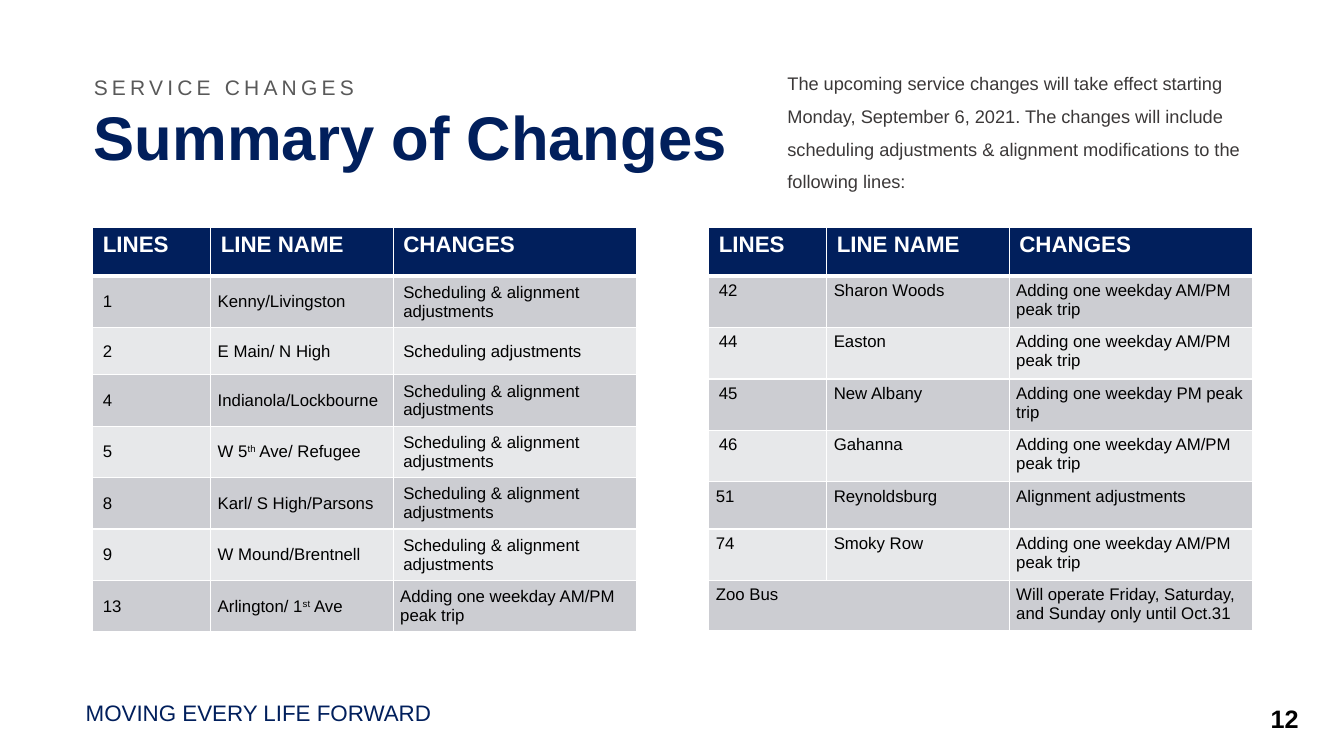
from lxml.etree import fromstring
from pptx import Presentation
from pptx.dml.color import RGBColor
from pptx.enum.text import MSO_ANCHOR, PP_ALIGN
from pptx.util import Inches, Pt

NAVY = RGBColor(0x01, 0x1F, 0x5C)
CHARCOAL = RGBColor(0x3B, 0x38, 0x38)
GRAY = RGBColor(0x59, 0x59, 0x59)
BAND_DARK = RGBColor(0xCC, 0xCD, 0xD2)
BAND_LIGHT = RGBColor(0xE7, 0xE8, 0xEA)
BLACK = RGBColor(0, 0, 0)
WHITE = RGBColor(0xFF, 0xFF, 0xFF)
NS = "http://schemas.openxmlformats.org/drawingml/2006/main"

HEADER = ["LINES", "LINE NAME", "CHANGES"]
COLUMNS = [1.17, 1.81, 2.41]
ALIGNMENT = "Scheduling & alignment adjustments"
AM_PM_TRIP = "Adding one weekday AM/PM peak trip"
# Text between ^ marks is superscript
LOCAL_LINES = [
    HEADER,
    ["1", "Kenny/Livingston", ALIGNMENT],
    ["2", "E Main/ N High", "Scheduling adjustments"],
    ["4", "Indianola/Lockbourne", ALIGNMENT],
    ["5", "W 5^th^ Ave/ Refugee", ALIGNMENT],
    ["8", "Karl/ S High/Parsons", ALIGNMENT],
    ["9", "W Mound/Brentnell", ALIGNMENT],
    ["13", "Arlington/ 1^st^ Ave", AM_PM_TRIP],
]
RUSH_LINES = [
    HEADER,
    ["42", "Sharon Woods", AM_PM_TRIP],
    ["44", "Easton", AM_PM_TRIP],
    ["45", "New Albany", "Adding one weekday PM peak trip"],
    ["46", "Gahanna", AM_PM_TRIP],
    ["51", "Reynoldsburg", "Alignment adjustments"],
    ["74", "Smoky Row", AM_PM_TRIP],
    ["Zoo Bus", "", "Will operate Friday, Saturday, and Sunday only until Oct.31"],
]


class SlideBuilder:
    font = "Arial"

    def __init__(self, slide):
        self.s = slide

    def add_runs(self, p, text, size, color, bold=False, spacing=None, **paragraph_format):
        for name, value in paragraph_format.items():
            setattr(p, name, value)
        for i, part in enumerate(text.split("^")):
            r = p.add_run()
            r.text = part
            values = {"name": self.font, "size": Pt(size), "bold": bold}
            for name, value in values.items():
                setattr(r.font, name, value)
            r.font.color.rgb = color
            rPr = r._r.get_or_add_rPr()
            if i % 2:
                rPr.set("baseline", "30000")
            if spacing:
                rPr.set("spc", str(spacing * 100))

    def text(self, box, text, size, color, **style):
        tf = self.s.shapes.add_textbox(*map(Inches, box)).text_frame
        tf.word_wrap = True
        for side in ("left", "top", "right", "bottom"):
            setattr(tf, f"margin_{side}", 0)
        self.add_runs(tf.paragraphs[0], text, size, color, **style)

    def borders(self, cell, top, bottom):
        tcPr = cell._tc.get_or_add_tcPr()
        for i, (side, width) in enumerate([("L", 1), ("R", 1), ("T", top), ("B", bottom)]):
            tcPr.insert(i, fromstring(
                f'<a:ln{side} xmlns:a="{NS}" w="{Pt(width)}"><a:solidFill>'
                f'<a:srgbClr val="{WHITE}"/></a:solidFill></a:ln{side}>'))

    def table(self, left, top, rows, heights, anchor, wide_margin):
        box = (left, top, sum(COLUMNS), sum(heights))
        table = self.s.shapes.add_table(len(rows), len(COLUMNS), *map(Inches, box)).table
        table.horz_banding = False
        for column, width in zip(table.columns, COLUMNS):
            column.width = Inches(width)
        for i, (row, height) in enumerate(zip(rows, heights)):
            table.rows[i].height = Inches(height)
            for j, text in enumerate(row):
                self.cell(table.cell(i, j), i, text, anchor, i == 0 or wide_margin(i, j))
        return table

    def cell(self, cell, row, text, anchor, wide):
        header = row == 0
        cell.fill.solid()
        cell.fill.fore_color.rgb = NAVY if header else BAND_DARK if row % 2 else BAND_LIGHT
        self.borders(cell, 3 if row == 1 else 1, 3 if header else 1)
        margin = Inches(0.1 if wide else 0.07)
        values = {"margin_left": margin, "margin_right": margin,
                  "vertical_anchor": MSO_ANCHOR.TOP if header else anchor}
        for name, value in values.items():
            setattr(cell, name, value)
        if text:
            p = cell.text_frame.paragraphs[0]
            self.add_runs(p, text, 16 if header else 12, WHITE if header else BLACK,
                          bold=header, space_after=Pt(0 if wide else 8))


def main():
    prs = Presentation()
    prs.slide_width, prs.slide_height = Inches(13.33), Inches(7.5)
    page = SlideBuilder(prs.slides.add_slide(prs.slide_layouts[6]))

    # Footer
    page.text((0.85, 6.94, 4.76, 0.32), "MOVING EVERY LIFE FORWARD", 16, NAVY)
    page.text((12.3, 6.98, 0.88, 0.24), "12", 18, BLACK, bold=True, alignment=PP_ALIGN.CENTER)

    # Heading and introduction
    page.text((0.93, 1.12, 6.38, 0.6), "Summary of Changes", 44, NAVY,
              bold=True, line_spacing=0.8)
    page.text((7.81, 0.61, 4.61, 1.26),
              "The upcoming service changes will take effect starting Monday, "
              "September 6, 2021. The changes will include scheduling adjustments "
              "& alignment modifications to the following lines:",
              13, CHARCOAL, line_spacing=1.5)
    page.text((0.93, 0.61, 5.38, 0.5), "SERVICE CHANGES", 15, GRAY,
              spacing=3, line_spacing=1.5)

    # Tables of changed lines
    page.table(0.92, 2.26, LOCAL_LINES, [0.48, 0.51, 0.47] + [0.51] * 5, MSO_ANCHOR.MIDDLE,
               lambda row, col: col == 0 or (col == 2 and row < 7))
    rush = page.table(7.03, 2.26, RUSH_LINES, [0.48] + [0.51] * 4 + [0.47, 0.51, 0.47],
                      MSO_ANCHOR.TOP, lambda row, col: col == 0 and row < 5)
    rush.cell(7, 0).merge(rush.cell(7, 1))

    prs.save("out.pptx")


if __name__ == "__main__":
    main()
